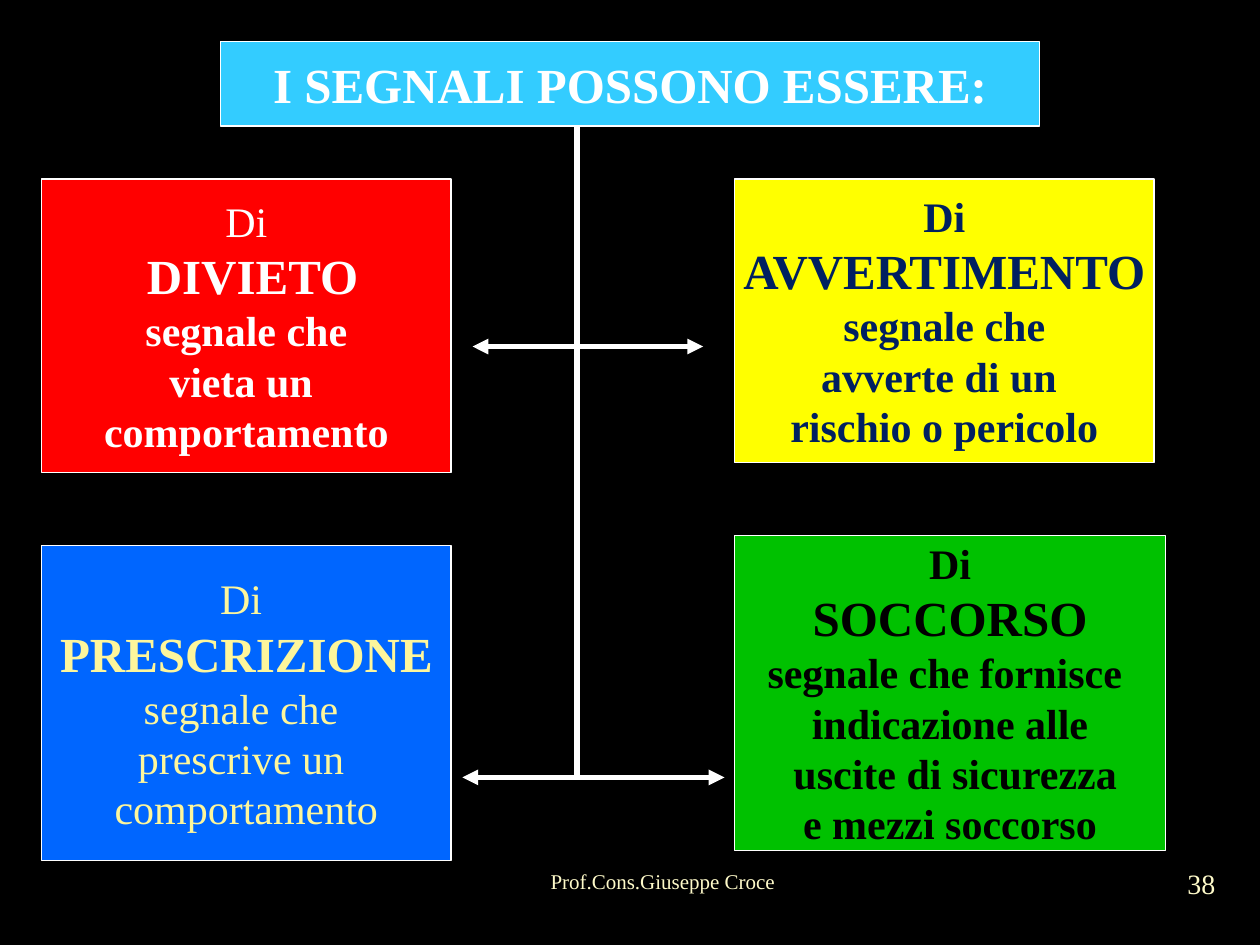
from lxml import etree
from pptx import Presentation
from pptx.dml.color import RGBColor
from pptx.enum.shapes import MSO_CONNECTOR, MSO_SHAPE
from pptx.enum.text import MSO_ANCHOR, MSO_AUTO_SIZE, PP_ALIGN
from pptx.oxml.ns import qn
from pptx.util import Inches, Pt

RECT, STRAIGHT = MSO_SHAPE.RECTANGLE, MSO_CONNECTOR.STRAIGHT
MIDDLE, NO_FIT = MSO_ANCHOR.MIDDLE, MSO_AUTO_SIZE.NONE
CENTER, RIGHT = PP_ALIGN.CENTER, PP_ALIGN.RIGHT

FONT, WHITE, CREAM = "Times New Roman", "FFFFFF", "FEFAC9"
BODY, KEYWORD = 24, 28

TITLE = "I SEGNALI POSSONO ESSERE:"
TITLE_BOX = (1.75, 0.33, 6.5, 0.67)

# box, fill, opacity, text colour, bold lines, lines
SIGNS = [
    ((0.33, 1.42, 3.25, 2.33), "FF0000", 100, WHITE, {1, 2, 3, 4},
     ["Di", " DIVIETO", "segnale che", "vieta un ", "comportamento"]),
    ((5.83, 1.42, 3.33, 2.25), "FFFF00", 100, "002060", {0, 1, 2, 3, 4},
     ["Di", "AVVERTIMENTO", "segnale che", "avverte di un ", "rischio o pericolo"]),
    ((0.33, 4.33, 3.25, 2.5), "0066FF", 100, "FDF69C", {1},
     ["Di ", "PRESCRIZIONE", "segnale che ", "prescrive un ", "comportamento"]),
    ((5.83, 4.25, 3.42, 2.5), "00CC00", 95, "000000", {0, 1, 2, 3, 4, 5},
     ["Di", "SOCCORSO", "segnale che fornisce ", "indicazione alle",
      " uscite di sicurezza", "e mezzi soccorso"]),
]

TRUNK_X, TRUNK_TOP = 4.58, 1.0
BRANCHES = [(2.75, 3.75, 5.58), (6.17, 3.67, 5.75)]

FOOTER = ("Prof.Cons.Giuseppe Croce", (2.33, 6.78, 3.92, 0.42), 12, RIGHT)
NUMBER = ("38", (9.2, 6.76, 0.67, 0.5), 16, CENTER)


def rgb(value):
    return RGBColor.from_string(value)


def place(sp, box):
    sp.left, sp.top, sp.width, sp.height = map(Inches, box)


def paint(sp, fill):
    sp.fill.solid()
    sp.fill.fore_color.rgb = rgb(fill)
    sp.line.color.rgb = rgb(WHITE)
    sp.line.width = Pt(0.75)


def write(sp, lines, sizes, color, bold=(), align=CENTER, wrap=False):
    tf = sp.text_frame
    tf.text = "\n".join(lines)
    tf.word_wrap = wrap
    tf.auto_size = NO_FIT
    tf.vertical_anchor = MIDDLE
    for i, (p, size) in enumerate(zip(tf.paragraphs, sizes)):
        p.alignment = align
        for r in p.runs:
            r.font.name = FONT
            r.font.size = Pt(size)
            r.font.bold = i in bold
            r.font.color.rgb = rgb(color)


def add_sign(s, box, fill, opacity, color, bold, lines):
    sp = s.shapes.add_shape(RECT, *map(Inches, box))
    sp.shadow.inherit = False
    paint(sp, fill)
    if opacity < 100:
        clr = sp.fill._xPr.find(qn("a:solidFill"))[0]
        etree.SubElement(clr, qn("a:alpha")).set("val", str(opacity * 1000))
    sizes = [KEYWORD if i == 1 else BODY for i in range(len(lines))]
    write(sp, lines, sizes, color, bold)


def add_line(s, x1, y1, x2, y2, arrow=False):
    cx = s.shapes.add_connector(STRAIGHT, *map(Inches, (x1, y1, x2, y2)))
    cx.line.color.rgb = rgb(WHITE)
    cx.line.width = Pt(3)
    if arrow:
        ln = cx.line._get_or_add_ln()
        etree.SubElement(ln, qn("a:tailEnd")).set("type", "triangle")
    etree.SubElement(cx._element.spPr, qn("a:effectLst"))


def add_note(s, text, box, size, align):
    sp = s.shapes.add_textbox(*map(Inches, box))
    write(sp, [text], [size], CREAM, align=align, wrap=True)
    return sp.text_frame


def main():
    prs = Presentation()
    prs.slide_width, prs.slide_height = Inches(10), Inches(7.5)
    s = prs.slides.add_slide(prs.slide_layouts[5])
    s.background.fill.solid()
    s.background.fill.fore_color.rgb = rgb("000000")

    title = s.shapes.title
    place(title, TITLE_BOX)
    paint(title, "33CCFF")
    write(title, [TITLE], [KEYWORD], WHITE, {0})

    for sign in SIGNS:
        add_sign(s, *sign)

    add_line(s, TRUNK_X, TRUNK_TOP, TRUNK_X, BRANCHES[-1][0])
    for y, *ends in BRANCHES:
        for x in ends:
            add_line(s, TRUNK_X, y, x, y, arrow=True)

    add_note(s, *FOOTER)
    tf = add_note(s, *NUMBER)
    tf.margin_left = tf.margin_right = tf.margin_top = tf.margin_bottom = 0

    prs.save("out.pptx")


if __name__ == "__main__":
    main()
